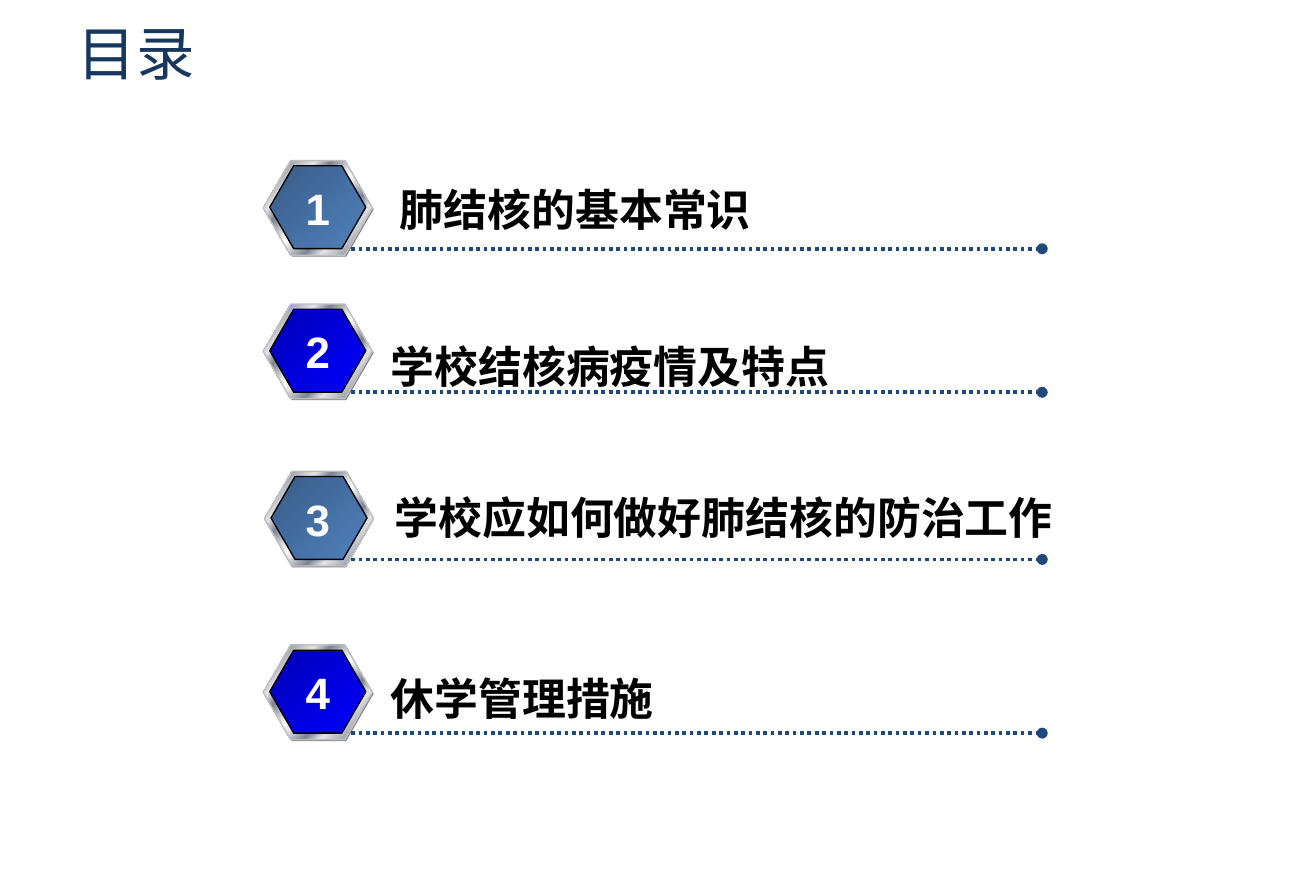
import dataclasses

import pptx
import pptx.dml.color
import pptx.enum.dml
import pptx.enum.shapes
import pptx.enum.text
import pptx.oxml.ns
import pptx.util
from lxml import etree

PX = 9144  # EMU per px, 100 px to the inch
qn = pptx.oxml.ns.qn
Pt = pptx.util.Pt
Align = pptx.enum.text.PP_ALIGN
Anchor = pptx.enum.text.MSO_ANCHOR
AutoSize = pptx.enum.text.MSO_AUTO_SIZE


@dataclasses.dataclass(frozen=True)
class Theme:
    latin: str = "Arial"
    cjk: str = "Noto Sans CJK SC"
    title_size: int = 32
    text_size: int = 24
    title: str = "17375E"
    text: str = "000000"
    number: str = "FFFFFF"
    rule: str = "1F497D"
    shade: str = "808080"
    rim_line: str = "C0C0C0"
    face_line: str = "000000"
    steel: tuple = ((0, "395C87"), (100, "4F81BD"))
    blue: tuple = ((0, "0000B6"), (100, "0000FF"))
    chrome: tuple = (
        (0, "E6E6E6"), (8, "7D8496"), (26, "E6E6E6"), (34, "7D8496"),
        (46, "E6E6E6"), (50, "FFFFFF"), (54, "E6E6E6"), (66, "7D8496"),
        (74, "E6E6E6"), (92, "7D8496"), (100, "E6E6E6"),
    )


def rgb(value):
    return pptx.dml.color.RGBColor.from_string(value)


def px(*lengths):
    return [pptx.util.Emu(n * PX) for n in lengths]


class Deck:
    def __init__(self, theme, prs):
        self.theme = theme
        self.slide = prs.slides.add_slide(prs.slide_layouts[6])

    def text(self, shapes, box, text, size, color, font, bold=True,
             align=Align.LEFT, wrap=True):
        tf = shapes.add_textbox(*px(*box)).text_frame
        tf.word_wrap = wrap
        tf.auto_size = AutoSize.SHAPE_TO_FIT_TEXT
        p = tf.paragraphs[0]
        p.text = text
        p.alignment = align
        p.font.size = Pt(size)
        p.font.bold = bold
        p.font.color.rgb = rgb(color)
        p.font.name = font
        props = p._p.pPr.find(qn("a:defRPr"))
        etree.SubElement(props, qn("a:ea"), typeface=self.theme.cjk)
        return tf

    def title(self, box, text):
        t = self.theme
        tf = self.text(self.slide.shapes, box, text, t.title_size, t.title,
                       t.cjk, bold=False)
        tf.auto_size = AutoSize.NONE
        tf.vertical_anchor = Anchor.MIDDLE
        tf.margin_left, tf.margin_top, tf.margin_right, tf.margin_bottom = px(8, 4, 8, 4)

    def hexagon(self, shapes, box, fill, line=None):
        """Fill is one colour, or (percent, colour) stops running to the lower right."""
        sp = shapes.add_shape(pptx.enum.shapes.MSO_SHAPE.HEXAGON, *px(*box))
        sp.adjustments[0] = 0.29
        sp.shadow.inherit = False
        if isinstance(fill, str):
            sp.fill.solid()
            sp.fill.fore_color.rgb = rgb(fill)
        else:
            sp.fill.gradient()
            sp.fill.gradient_angle = 315
            stops = sp._element.spPr.find(".//" + qn("a:gsLst"))
            stops[:] = []
            for percent, color in fill:
                stop = etree.SubElement(stops, qn("a:gs"), pos=str(percent * 1000))
                etree.SubElement(stop, qn("a:srgbClr"), val=color)
        if line:
            sp.line.color.rgb = rgb(line)
            sp.line.width = Pt(0.75)
        else:
            sp.line.fill.background()

    def dotted_rule(self, shapes, left, right, y):
        line = shapes.add_connector(pptx.enum.shapes.MSO_CONNECTOR.STRAIGHT,
                                    *px(left, y, right, y))
        line.line.color.rgb = rgb(self.theme.rule)
        line.line.width = Pt(2)
        line.line.dash_style = pptx.enum.dml.MSO_LINE.ROUND_DOT
        etree.SubElement(line.line._get_or_add_ln(), qn("a:tailEnd"), type="oval")
        etree.SubElement(line._element.spPr, qn("a:effectLst"))

    def badge(self, left, top, number, face):
        """Numbered metal-rimmed hexagon with its dotted rule, as one group."""
        t = self.theme
        shapes = self.slide.shapes.add_group_shape().shapes
        self.hexagon(shapes, (201, top + 1, 83, 72), t.shade)
        self.hexagon(shapes, (left, top, 83, 72), t.chrome, t.rim_line)
        self.hexagon(shapes, (left + 5, top + 4, 73, 63), face, t.face_line)
        self.dotted_rule(shapes, 267, 792, top + 67)
        self.text(shapes, (222, top + 11, 39, 50), str(number), t.text_size,
                  t.number, t.latin, align=Align.CENTER, wrap=False)

    def label(self, left, top, width, text):
        t = self.theme
        self.text(self.slide.shapes, (left, top, width, 50), text, t.text_size,
                  t.text, t.latin)


def main():
    theme = Theme()
    prs = pptx.Presentation()
    prs.slide_width = pptx.util.Cm(25.4)
    prs.slide_height = pptx.util.Cm(17)
    deck = Deck(theme, prs)
    deck.title((51, 12, 897, 55), "目录")
    # badge left and top, label left, top and width, label
    entries = [
        (200, 122, 294, 134, 506, "肺结核的基本常识"),
        (200, 231, 287, 253, 465, "学校结核病疫情及特点"),
        (201, 358, 290, 368, 532, "学校应如何做好肺结核的防治工作"),
        (200, 490, 287, 505, 669, "休学管理措施"),
    ]
    for number, (badge_left, badge_top, left, top, width, text) in enumerate(entries, 1):
        face = theme.steel if number % 2 else theme.blue
        deck.badge(badge_left, badge_top, number, face)
        deck.label(left, top, width, text)
    prs.save("out.pptx")


if __name__ == "__main__":
    main()
